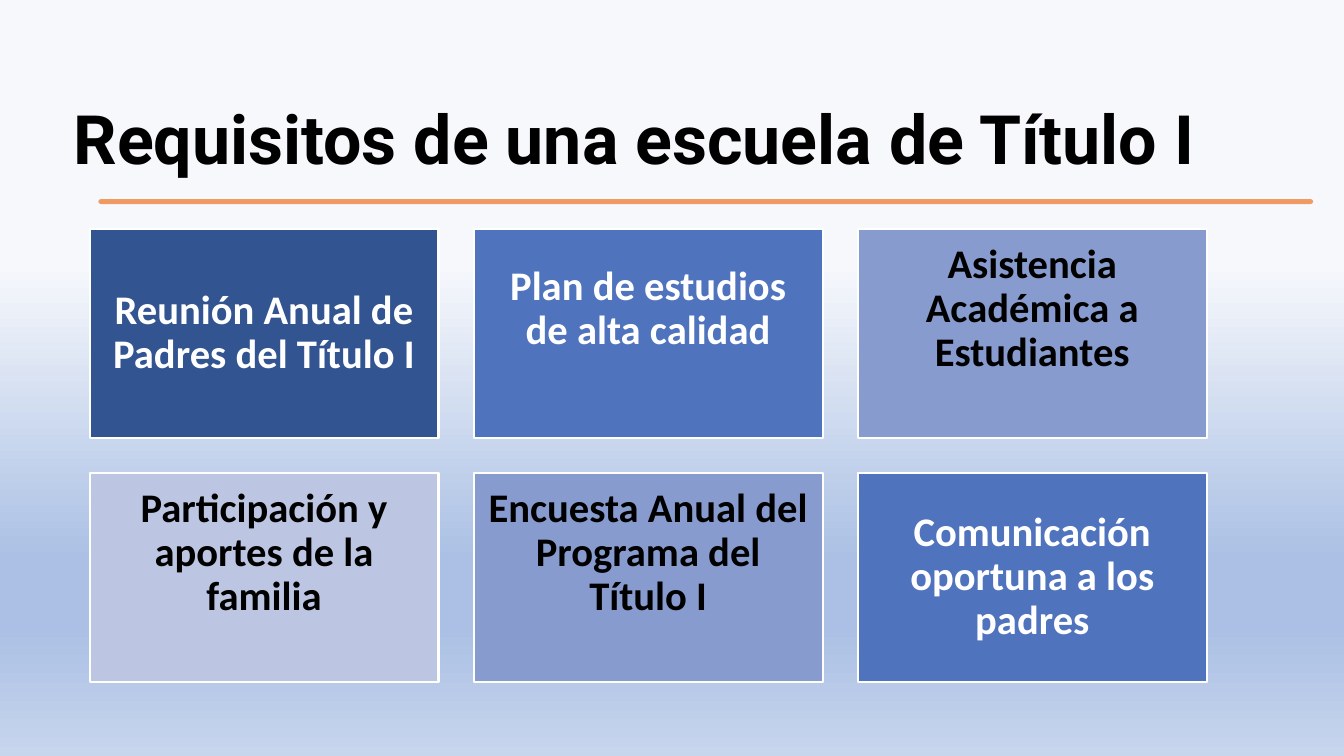
from pptx import Presentation
from pptx import util as u
from pptx.dml.color import RGBColor
from pptx.enum import shapes, text
from pptx.oxml import parse_xml
from pptx.oxml.ns import nsdecls, qn
from lxml import etree

TITLE = "Requisitos de una escuela de Título I"
HUES = {
    "navy": "325491", "blue": "4F73BD", "mid": "879BCE", "pale": "BCC6E2",
    "white": "FFFFFF", "black": "000000", "orange": "ED7D31",
}
STOPS = [(35, "F6F8FC"), (74, "ABC0E4"), (83, "ABC0E4"), (100, "C7D5ED")]

# wording, fill, font colour, bottom inset
CARDS = [
    ("Reunión Anual de Padres del Título I", "navy", "white", 0.12),
    ("Plan de estudios de alta calidad", "blue", "white", 0.6),
    ("Asistencia Académica a Estudiantes", "mid", "black", 0.6),
    ("Participación y aportes de la familia", "pale", "black", 0.6),
    ("Encuesta Anual del Programa del Título I", "mid", "black", 0.6),
    ("Comunicación oportuna a los padres", "blue", "white", 0.12),
]
COLS, LEFT, TOP = 3, 0.89, 2.27
WIDE, HIGH, STEP_X, STEP_Y = 3.46, 2.08, 3.81, 2.42

# brush stroke: upper edge left to right, lower edge right to left
UPPER = [
    (0.63, 1.84), (1.02, 1.84), (1.4, 1.83), (1.77, 1.84), (2.4, 1.83),
    (2.9, 1.85), (3.51, 1.84), (3.9, 1.85), (4.41, 1.84), (5.4, 1.84),
    (5.75, 1.83), (6.05, 1.82), (6.3, 1.83), (6.6, 1.85), (7.38, 1.84),
    (8.52, 1.84), (9.15, 1.83), (9.54, 1.84), (10.53, 1.84),
    (11.31, 1.84), (11.94, 1.84), (12.63, 1.84),
]
LOWER = [
    (12.63, 1.86), (12.1, 1.86), (11.5, 1.88), (11.2, 1.86), (10.4, 1.86),
    (9.84, 1.85), (9.45, 1.87), (9.09, 1.86), (8.2, 1.87), (7.7, 1.87),
    (7.2, 1.85), (6.6, 1.87), (5.73, 1.86), (5.3, 1.87), (4.83, 1.86),
    (4.2, 1.87), (3.45, 1.86), (2.46, 1.86), (1.7, 1.87), (1.1, 1.85),
    (0.63, 1.86),
]


def tint(name):
    return RGBColor.from_string(HUES[name])


def place(shape, *box):
    for key, size in zip(("left", "top", "width", "height"), box):
        setattr(shape, key, u.Inches(size))


def write(shape, words, face, frame):
    """Put one styled paragraph in a shape."""
    body = shape.text_frame
    for key, value in frame.items():
        setattr(body, key, value)
    body.text = words
    para = body.paragraphs[0]
    para.line_spacing = 0.9
    para.alignment = face["align"]
    font = para.runs[0].font
    font.name, font.size, font.bold = face["name"], u.Pt(face["size"]), True
    font.color.rgb = tint(face["hue"])


def paint(slide):
    """Fill the background with the vertical gradient."""
    fill = slide.background.fill
    fill.gradient()
    fill.gradient_angle = 270
    grad = slide.background._cSld.find(".//" + qn("a:gradFill"))
    marks = "".join(
        f'<a:gs pos="{pos * 1000}"><a:srgbClr val="{hue}"/></a:gs>'
        for pos, hue in STOPS)
    grad.replace(grad.find(qn("a:gsLst")),
                 parse_xml(f'<a:gsLst {nsdecls("a")}>{marks}</a:gsLst>'))


def brush(slide):
    pen = slide.shapes.build_freeform(*UPPER[0], scale=u.Inches(1))
    pen.add_line_segments(UPPER[1:] + LOWER, close=True)
    stroke = pen.convert_to_shape()
    stroke.shadow.inherit = False
    stroke.line.width = u.Pt(3.5)
    for fill in (stroke.fill, stroke.line.fill):
        fill.solid()
        fill.fore_color.rgb = tint("orange")
    for hue in stroke._element.spPr.iter(qn("a:srgbClr")):
        etree.SubElement(hue, qn("a:alpha"), val="75000")


def card(slide, spot, words, fill, ink, foot):
    row, col = divmod(spot, COLS)
    box = slide.shapes.add_shape(
        shapes.MSO_SHAPE.RECTANGLE, u.Inches(LEFT + col * STEP_X),
        u.Inches(TOP + row * STEP_Y), u.Inches(WIDE), u.Inches(HIGH))
    box.shadow.inherit = False
    box.fill.solid()
    box.fill.fore_color.rgb = tint(fill)
    box.line.color.rgb = tint("white")
    box.line.width = u.Pt(1.5)
    face = {"name": "Calibri", "size": 29, "hue": ink,
            "align": text.PP_ALIGN.CENTER}
    frame = {f"margin_{side}": u.Inches(0.12)
             for side in ("left", "right", "top")}
    frame.update(margin_bottom=u.Inches(foot), word_wrap=True,
                 vertical_anchor=text.MSO_ANCHOR.MIDDLE)
    write(box, words, face, frame)


def main():
    deck = Presentation()
    deck.slide_width, deck.slide_height = u.Inches(13.33), u.Inches(7.5)
    slide = deck.slides.add_slide(deck.slide_layouts[5])
    paint(slide)
    title = slide.shapes.title
    place(title, 0.63, 0.26, 12.2, 1.57)
    write(title, TITLE,
          {"name": "Roboto", "size": 48.6, "hue": "black",
           "align": text.PP_ALIGN.LEFT},
          {"vertical_anchor": text.MSO_ANCHOR.BOTTOM, "word_wrap": True,
           "auto_size": text.MSO_AUTO_SIZE.NONE})
    brush(slide)
    for spot, item in enumerate(CARDS):
        card(slide, spot, *item)
    deck.save("out.pptx")


if __name__ == "__main__":
    main()
